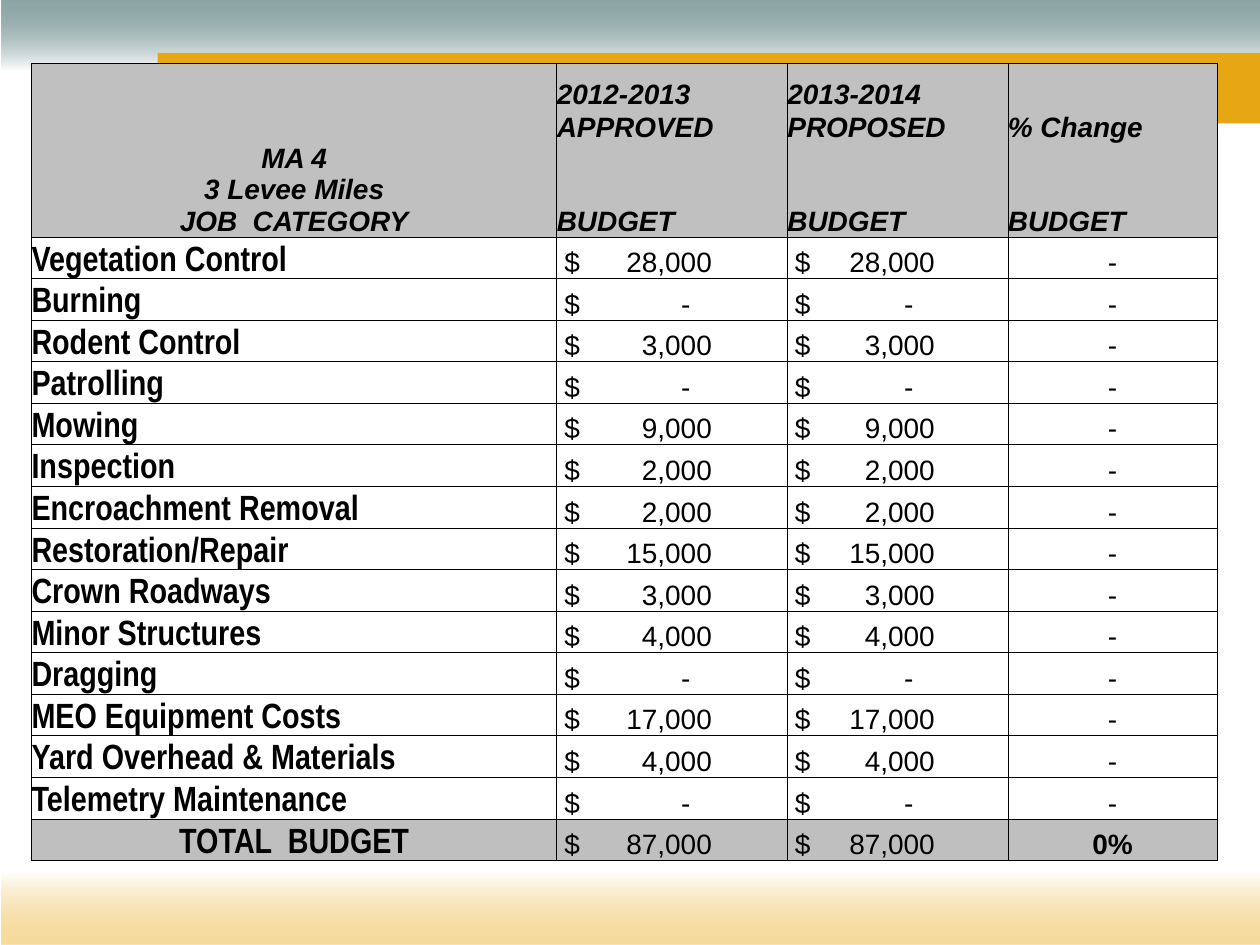
import pptx
import pptx.util
import pptx.dml.color
import pptx.enum.shapes
import pptx.enum.text
import pptx.oxml
import pptx.oxml.ns
from lxml import etree

Inches = pptx.util.Inches
Pt = pptx.util.Pt
RGBColor = pptx.dml.color.RGBColor
ALIGN = pptx.enum.text.PP_ALIGN
qn = pptx.oxml.ns.qn

BLACK = RGBColor(0x00, 0x00, 0x00)
WHITE = RGBColor(0xFF, 0xFF, 0xFF)
TEAL = RGBColor(0x21, 0x53, 0x52)
GOLD = RGBColor(0xEE, 0xB8, 0x40)
AMBER = RGBColor(0xE7, 0xA6, 0x14)
SILVER = RGBColor(0xC0, 0xC0, 0xC0)
GRAY = RGBColor(0xBF, 0xBF, 0xBF)

PLAIN = "{2D5ABB26-0587-4C30-8999-92F81FD0307C}"  # no style, no grid
COLS = [4.17, 1.83, 1.75, 1.66]
HEADS = [0.38, 0.26, 0.26]
ROW = 0.33
TABS = [1.17, 1.11]  # right edge of the amounts in each budget column
INDENT = 0.06
DASH = 0.17  # how far a dash stands in from that edge

TITLE = ["MA 4", "3 Levee Miles", "JOB  CATEGORY"]
LABELS = [
    ["2012-2013", "2013-2014", ""],
    ["APPROVED", "PROPOSED", "% Change"],
    ["BUDGET", "BUDGET", "BUDGET"],
]
JOBS = [
    ("Vegetation Control", 28000),
    ("Burning", 0),
    ("Rodent Control", 3000),
    ("Patrolling", 0),
    ("Mowing", 9000),
    ("Inspection", 2000),
    ("Encroachment Removal", 2000),
    ("Restoration/Repair", 15000),
    ("Crown Roadways", 3000),
    ("Minor Structures", 4000),
    ("Dragging", 0),
    ("MEO Equipment Costs", 17000),
    ("Yard Overhead & Materials", 4000),
    ("Telemetry Maintenance", 0),
]


def add_band(slide, box, color, angle=None):
    """Add a plain bar, or one fading to white when an angle is given."""
    kind = pptx.enum.shapes.MSO_SHAPE.RECTANGLE
    band = slide.shapes.add_shape(kind, *map(Inches, box))
    band.shadow.inherit = False
    band.line.fill.background()
    if angle is None:
        band.fill.solid()
        band.fill.fore_color.rgb = color
        return
    band.fill.gradient()
    band.fill.gradient_angle = angle
    first, last = band.fill.gradient_stops
    first.color.rgb, first.position = color, 0
    last.color.rgb, last.position = WHITE, 0.52
    tint = next(band.element.iter(qn("a:srgbClr")))
    etree.SubElement(tint, qn("a:alpha"), val="51000")


def write(cell, text, size=16, font="Arial", bold=False, italic=False,
          align=ALIGN.LEFT, tab=None):
    """Fill a cell, one paragraph for each line of text."""
    cell.vertical_anchor = pptx.enum.text.MSO_ANCHOR.BOTTOM
    cell.margin_left = Inches(INDENT if tab else 0)
    cell.margin_right = cell.margin_top = cell.margin_bottom = 0
    frame = cell.text_frame
    for i, line in enumerate(text.split("\n")):
        para = frame.add_paragraph() if i else frame.paragraphs[0]
        para.alignment = align
        if tab:
            stops = etree.SubElement(para._p.get_or_add_pPr(), qn("a:tabLst"))
            etree.SubElement(stops, qn("a:tab"), pos=str(Inches(tab)), algn="r")
        run = para.add_run()
        run.text = line
        run.font.size = Pt(size)
        run.font.name = font
        run.font.bold = bold
        run.font.italic = italic
        run.font.color.rgb = BLACK


def paint(cell, color, sides):
    """Draw the borders on the given sides, then set the fill."""
    props = cell._tc.get_or_add_tcPr()
    for side in sides:
        edge = etree.SubElement(props, qn("a:ln" + side), w=str(Pt(0.5)))
        fill = etree.SubElement(edge, qn("a:solidFill"))
        etree.SubElement(fill, qn("a:srgbClr"), val=str(BLACK))
    if color is None:
        cell.fill.background()
    else:
        cell.fill.solid()
        cell.fill.fore_color.rgb = color


def fill_head(table):
    style = {"bold": True, "italic": True}
    table.cell(0, 0).merge(table.cell(len(HEADS) - 1, 0))
    write(table.cell(0, 0), "\n".join(TITLE), align=ALIGN.CENTER, **style)
    for r, labels in enumerate(LABELS):
        for c, label in enumerate(labels, 1):
            write(table.cell(r, c), label, **style)


def fill_row(table, r, name, cost, change="-", total=False):
    write(table.cell(r, 0), name, size=20, font="Arial Narrow", bold=True,
          align=ALIGN.CENTER if total else ALIGN.LEFT)
    for c, tab in enumerate(TABS, 1):
        if cost:
            write(table.cell(r, c), f"$\t{cost:,}", tab=tab)
        else:
            write(table.cell(r, c), "$\t-", tab=tab - DASH)
    write(table.cell(r, 3), change, bold=total, align=ALIGN.CENTER)


def add_budget(slide, left, top):
    heights = HEADS + [ROW] * (len(JOBS) + 1)
    last = len(heights) - 1
    frame = slide.shapes.add_table(
        len(heights), len(COLS), Inches(left), Inches(top),
        Inches(sum(COLS)), Inches(sum(heights)))
    table = frame.table
    table.first_row = table.horz_banding = False
    table._tbl.tblPr.find(qn("a:tableStyleId")).text = PLAIN
    for col, width in zip(table.columns, COLS):
        col.width = Inches(width)
    for r, height in enumerate(heights):
        table.rows[r].height = Inches(height)
        head = r < len(HEADS)
        color = SILVER if head else GRAY if r == last else None
        sides = ["L", "R"]
        if r == 0 or not head:
            sides.append("T")
        if r >= len(HEADS) - 1:
            sides.append("B")
        for c in range(len(COLS)):
            paint(table.cell(r, c), color, sides)
    fill_head(table)
    for r, (name, cost) in enumerate(JOBS, len(HEADS)):
        fill_row(table, r, name, cost)
    total = sum(cost for name, cost in JOBS)
    fill_row(table, last, "TOTAL  BUDGET", total, change="0%", total=True)


def main():
    deck = pptx.Presentation()
    deck.slide_width, deck.slide_height = Inches(10), Inches(7.5)
    slide = deck.slides.add_slide(deck.slide_layouts[6])
    add_band(slide, (0.01, 0, 9.99, 1.09), TEAL, angle=270)
    add_band(slide, (1.25, 0.42, 8.75, 0.56), AMBER)
    add_band(slide, (0.01, 6.39, 9.99, 1.11), GOLD, angle=90)
    add_budget(slide, 0.25, 0.5)
    deck.save("out.pptx")


if __name__ == "__main__":
    main()
